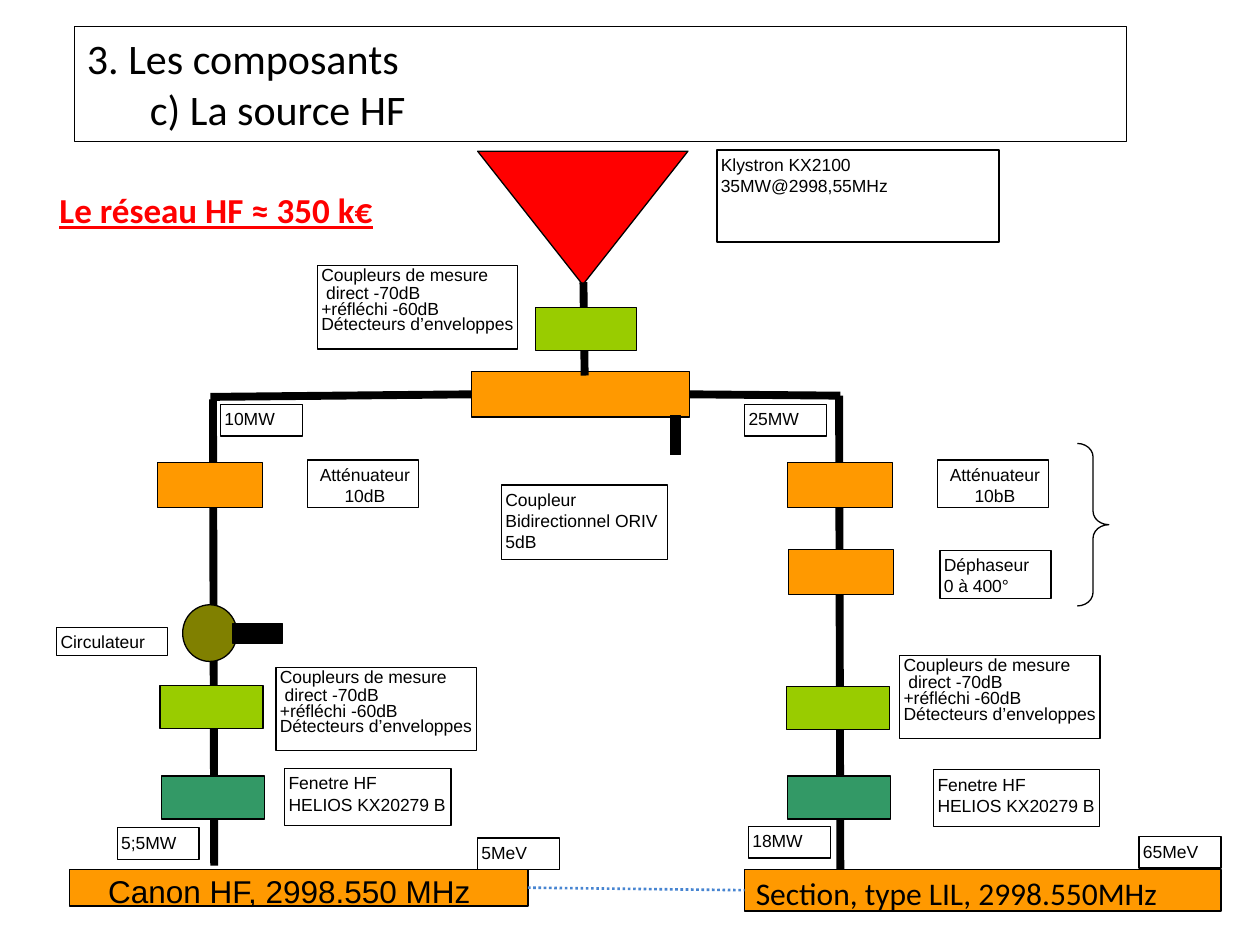
from pptx import Presentation, util as u
from pptx.dml import color
from pptx.enum import dml, shapes, text
from pptx.oxml import xmlchemy as xc
from dataclasses import dataclass
from lxml import etree

Pt = u.Pt
Kind = shapes.MSO_SHAPE
Mid = text.PP_ALIGN.CENTER
Left = text.PP_ALIGN.LEFT


@dataclass(frozen=True)
class Theme:
    black: str = "000000"
    white: str = "FFFFFF"
    red: str = "FF0000"
    orange: str = "FF9900"
    lime: str = "99CC00"
    teal: str = "339966"
    olive: str = "808000"
    blue: str = "4785D1"
    sans: str = "Arial"
    head: str = "Calibri"
    title: int = 24
    cost: int = 20
    band: int = 18
    note: int = 10
    thin: float = 0.75
    wire: float = 4.5
    dots: float = 1.5


T = Theme()

TITLE = ["3. Les composants", "\tc) La source HF"]
TITLE_BOX = (42.5, 15.1, 601.2, 65.5)

NODES = {
    "klystron": (Kind.ISOSCELES_TRIANGLE, T.red, (272.9, 86.4, 120.2, 76.3)),
    "section": (Kind.RECTANGLE, T.orange, (425.5, 496.8, 272.2, 23.8)),
    "canon": (Kind.RECTANGLE, T.orange, (39.6, 496.8, 262.1, 20.9)),
    "split": (Kind.RECTANGLE, T.orange, (269.3, 212.4, 124.6, 25.9)),
}

WIRES = [
    ((121.7, 228.2), (122.4, 494.6), None, None),
    ((269.3, 226.8), (120.2, 226.8), ("split", 1), None),
    ((479.5, 226.1), (480.2, 496.8), None, None),
    ((393.8, 225.4), (480.2, 226.1), ("split", 3), None),
    ((334.1, 214.6), (333.4, 161.3), None, None),
]
LINK = ((301.7, 507.2), (425.5, 508.7), ("canon", 3), ("section", 1))

PARTS = [
    (T.orange, (60, 25.9), [(90, 264.2), (450, 264.2), (450.7, 313.9)]),
    (T.lime, (59, 24.5), [(91.4, 391.7), (449.3, 392.4)]),
    (T.lime, (57.6, 24.5), [(306, 175.7)]),
    (T.teal, (59, 24.5), [(92.2, 443.5), (450, 443.5)]),
]
CIRCLE = (104.4, 345.6, 31, 32.4)
LOADS = [(133.2, 356.4, 28.1, 11.5), (383, 237.6, 5.8, 22.3)]
BRACE = (615.6, 253.4, 18, 92.9)

WINDOW = ["Fenetre HF", "HELIOS KX20279 B"]
METER = ["Coupleurs de mesure", " direct -70dB", "+réfléchi -60dB",
         "Détecteurs d’enveloppes"]
METER_GAPS = [9, 10, 9, 9]
POWER = (46.8, 18)
SMALL = (63.4, 27.4)

NOTES = [
    (POWER, Left, [(["25MW"], 425.5, 231.1), (["10MW"], 126, 231.1),
                   (["18MW"], 427.7, 472.3), (["5;5MW"], 67, 473),
                   (["5MeV"], 272.9, 478.8), (["65MeV"], 650.9, 478.1)]),
    (SMALL, Mid, [(["Atténuateur", "10dB"], 175.7, 262.8),
                  (["Atténuateur", "10bB"], 535.7, 262.8)]),
    (SMALL, Left, [(["Déphaseur", "0 à 400°"], 537.1, 314.6)]),
    ((63.4, 15.8), Left, [(["Circulateur"], 32.4, 358.6)]),
    ((95, 32.4), Left, [(WINDOW, 162.7, 439.2), (WINDOW, 533.5, 439.9)]),
    ((95, 42.5), Left, [(["Coupleur Bidirectionnel ORIV", "5dB"], 286.6, 277.2)]),
    ((161.3, 52.6), Left, [(["Klystron KX2100", "35MW@2998,55MHz"], 409.7, 85.7)]),
    ((114.5, 47.5), Left, [(METER, 181.4, 151.9), (METER, 157.7, 381.6),
                           (METER, 514.1, 374.4)]),
]

CAPTIONS = [
    ("Canon HF, 2998.550 MHz", (54.7, 494.6, 223.9, 25.9), Left,
     dict(name=T.sans, size=Pt(T.band)), T.black),
    ("Section, type LIL, 2998.550MHz", (424.8, 496.1, 285.1, 25.2), Left,
     dict(name=T.head, size=Pt(T.band)), T.black),
    ("Le réseau HF ≈ 350 k€", (25.2, 104.4, 196.6, 31.7), Mid,
     dict(name=T.head, size=Pt(T.cost), bold=True, underline=True), T.red),
]


def apply(obj, vals):
    for key, val in vals.items():
        setattr(obj, key, val)


def rgb(code):
    return color.RGBColor.from_string(code)


def pts(vals):
    return [Pt(v) for v in vals]


def write(shape, lines, font, ink, align=Left, gaps=None, **frame):
    body = shape.text_frame
    apply(body, dict(word_wrap=True, vertical_anchor=text.MSO_ANCHOR.TOP, **frame))
    for i, line in enumerate(lines):
        para = body.paragraphs[0] if i == 0 else body.add_paragraph()
        para.alignment = align
        if gaps:
            para.line_spacing = Pt(gaps[i])
        run = para.add_run()
        run.text = line
        apply(run.font, font)
        run.font.color.rgb = rgb(ink)


def edge(line, ink, width):
    line.color.rgb = rgb(ink)
    line.width = Pt(width)


def draw(slide, kind, box, fill=None):
    shape = slide.shapes.add_shape(kind, *pts(box))
    shape.shadow.inherit = False
    if fill:
        shape.fill.solid()
        shape.fill.fore_color.rgb = rgb(fill)
    else:
        shape.fill.background()
    edge(shape.line, T.black, T.thin)
    return shape


def join(slide, nodes, wire, ink, width):
    start, end, tail, head = wire
    line = slide.shapes.add_connector(shapes.MSO_CONNECTOR.STRAIGHT,
                                      *pts(start + end))
    edge(line.line, ink, width)
    if tail:
        line.begin_connect(nodes[tail[0]], tail[1])
    if head:
        line.end_connect(nodes[head[0]], head[1])
    props = line._element.spPr
    etree.SubElement(props, xc.qn("a:effectLst"))
    return line


def main():
    deck = Presentation()
    apply(deck, dict(slide_width=Pt(720), slide_height=Pt(540)))
    slide = deck.slides.add_slide(deck.slide_layouts[5])

    title = slide.shapes.title
    apply(title, dict(zip(("left", "top", "width", "height"), pts(TITLE_BOX))))
    edge(title.line, T.black, 0.25)
    write(title, TITLE, dict(name=T.head, size=Pt(T.title)), T.black,
          auto_size=text.MSO_AUTO_SIZE.SHAPE_TO_FIT_TEXT)

    nodes = {name: draw(slide, kind, box, fill)
             for name, (kind, fill, box) in NODES.items()}
    nodes["klystron"].rotation = 180

    for wire in WIRES:
        join(slide, nodes, wire, T.black, T.wire)
    link = join(slide, nodes, LINK, T.blue, T.dots)
    link.line.dash_style = dml.MSO_LINE.ROUND_DOT

    for fill, size, spots in PARTS:
        for spot in spots:
            draw(slide, Kind.RECTANGLE, spot + size, fill)
    draw(slide, Kind.OVAL, CIRCLE, T.olive)
    for box in LOADS:
        draw(slide, Kind.RECTANGLE, box, T.black)
    brace = draw(slide, Kind.RIGHT_BRACE, BRACE)
    brace.adjustments[0] = 0.43

    inset = dict(margin_left=Pt(2.2), margin_top=Pt(2.2),
                 margin_right=0, margin_bottom=0)
    font = dict(name=T.sans, size=Pt(T.note))
    for size, align, items in NOTES:
        for lines, x, y in items:
            note = draw(slide, Kind.RECTANGLE, (x, y) + size, T.white)
            gaps = METER_GAPS if lines is METER else None
            write(note, lines, font, T.black, align, gaps, **inset)

    for words, box, align, look, ink in CAPTIONS:
        label = slide.shapes.add_textbox(*pts(box))
        write(label, [words], look, ink, align)

    deck.save("out.pptx")


if __name__ == "__main__":
    main()
